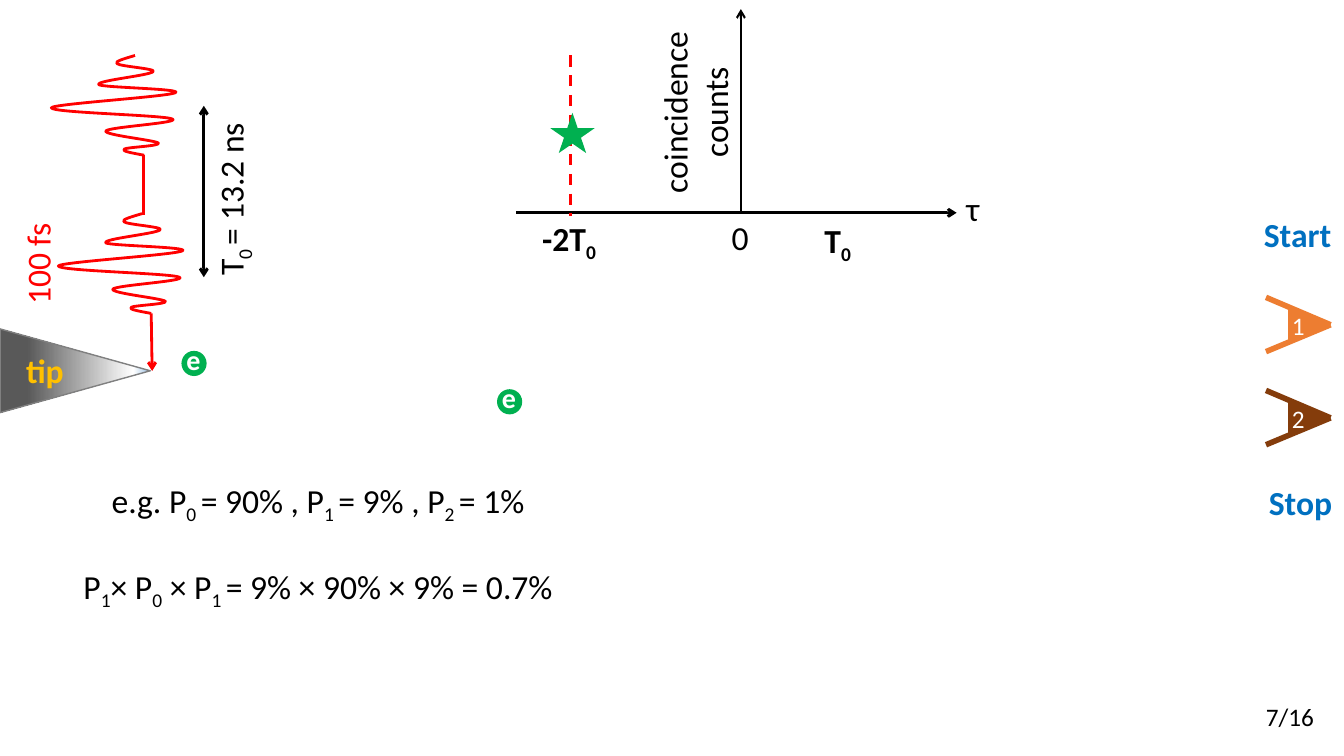
from lxml import etree
from pptx import Presentation
from pptx import util as u
from pptx.dml.color import RGBColor
from pptx.enum import dml, shapes, text
from pptx.oxml.ns import qn

Pt = u.Pt
BLACK, WHITE, RED, GREEN = "000000", "FFFFFF", "FF0000", "00B050"
ORANGE, BROWN, BLUE, GOLD = "ED7D31", "843C0B", "0070C0", "FFC000"

# Each row is one Bezier piece, relative to the start of the pulse.
PULSE_CURVES = [
    [(-7.2, 2.2), (-15.1, 4.3), (-13, 5.8)],
    [(-10.8, 7.9), (15.1, 9.4), (13, 11.5)],
    [(10.8, 14.4), (-28.8, 18), (-25.9, 20.9)],
    [(-23, 23), (34.6, 23.8), (28.8, 26.6)],
    [(23.8, 29.5), (-59, 34.6), (-59.8, 37.4)],
    [(-59.8, 41), (20.2, 42.5), (26.6, 45.4)],
    [(33.1, 48.2), (-19.4, 51.1), (-20.9, 54)],
    [(-22.3, 56.9), (14.4, 60.5), (16.6, 62.6)],
    [(18.7, 64.8), (-6.5, 65.5), (-7.9, 67)],
    [(-10.1, 68.4), (-1.4, 69.8), (6.5, 71.3)],
]


def color(hex_text):
    return RGBColor.from_string(hex_text)


def add_label(slide, box, lines, tint=BLACK, size=24, bold=False, rotation=0,
              centered=False, wrap=False, gap=0):
    """Add text; in each line, every second part between underscores is a subscript."""
    shape = slide.shapes.add_textbox(*map(Pt, box))
    shape.rotation = rotation
    frame = shape.text_frame
    frame.word_wrap = wrap
    frame.auto_size = text.MSO_AUTO_SIZE.SHAPE_TO_FIT_TEXT
    for index, line in enumerate(lines):
        paragraph = frame.add_paragraph() if index else frame.paragraphs[0]
        if centered:
            paragraph.alignment = text.PP_ALIGN.CENTER
        if index and gap:
            paragraph.space_before = Pt(gap)
        for part, content in enumerate(line.split("_")):
            run = paragraph.add_run()
            run.text = content
            look = {"name": "Calibri", "size": Pt(size), "bold": bold}
            for name, value in look.items():
                setattr(run.font, name, value)
            run.font.color.rgb = color(tint)
            if part % 2:
                run.font._element.set("baseline", "-25000")


def add_line(slide, start, end, tint=BLACK, width=2, arrows=(), dashed=False):
    """Draw a line; arrows holds headEnd (at start) and tailEnd (at end)."""
    line = slide.shapes.add_connector(
        shapes.MSO_CONNECTOR.STRAIGHT, *map(Pt, (*start, *end)))
    line.line.color.rgb = color(tint)
    line.line.width = Pt(width)
    if dashed:
        line.line.dash_style = dml.MSO_LINE.DASH
    outline = line.line._get_or_add_ln()
    for end_name in arrows:
        etree.SubElement(outline, qn("a:" + end_name), type="arrow")
    etree.SubElement(line._element.spPr, qn("a:effectLst"))


def add_solid(slide, kind, box, fill, rotation=0):
    shape = slide.shapes.add_shape(kind, *map(Pt, box))
    shape.shadow.inherit = False
    shape.rotation = rotation
    shape.fill.solid()
    shape.fill.fore_color.rgb = color(fill)
    shape.line.fill.background()
    return shape


def add_tip(slide):
    tip = add_solid(slide, shapes.MSO_SHAPE.ISOSCELES_TRIANGLE,
                    (23.8, 211.2, 59.8, 107.3), WHITE, 90)
    tip.line.color.rgb = color("808080")
    tip.line.width = Pt(1)
    tip.fill.gradient()
    tip.fill.gradient_angle = 270
    stops = tip._element.spPr.find(".//" + qn("a:gsLst"))
    stops.clear()
    for percent, tint in ((0, "99BEE1"), (11, WHITE), (82, "595959")):
        stop = etree.SubElement(stops, qn("a:gs"), pos=str(percent * 1000))
        etree.SubElement(stop, qn("a:srgbClr"), val=tint)
    add_label(slide, (11.5, 246.7, 41.8, 36), ["tip"], GOLD, bold=True)


def add_pulse(slide, left, top):
    """Draw a wave packet, bending each straight piece into its Bezier curve."""
    builder = slide.shapes.build_freeform(Pt(left), Pt(top))
    builder.add_line_segments(
        [(Pt(left + x), Pt(top + y)) for *_, (x, y) in PULSE_CURVES], close=False)
    pulse = builder.convert_to_shape()
    pieces = pulse._element.spPr.findall(".//" + qn("a:lnTo"))
    for piece, curve in zip(pieces, PULSE_CURVES):
        piece.clear()
        piece.tag = qn("a:cubicBezTo")
        for x, y in curve:
            etree.SubElement(piece, qn("a:pt"), x=str(Pt(left + x) - pulse.left),
                             y=str(Pt(top + y) - pulse.top))
    pulse.shadow.inherit = False
    pulse.fill.background()
    pulse.line.color.rgb = color(RED)
    pulse.line.width = Pt(2)


def add_electron(slide, left, top):
    add_solid(slide, shapes.MSO_SHAPE.OVAL, (left, top, 18, 18), GREEN)
    add_label(slide, (left - 3.6, top - 9.8, 24.5, 31.7), ["e"], WHITE, 20, True)


def add_detector(slide, top, number, tint):
    for y in (top, top + 38.8):
        add_line(slide, (904.3, y), (950.4, top + 19.6), tint, 4)
    add_solid(slide, shapes.MSO_SHAPE.ISOSCELES_TRIANGLE,
              (922.3, top + 5.8, 24.5, 28.8), tint, 90)
    add_label(slide, (915.8, top + 5.8, 23.8, 28.8), [number], WHITE, 18)


def add_laser(slide):
    add_pulse(slide, 101.5, 152.6)
    add_line(slide, (108, 223.9), (108.7, 265), RED, arrows=["tailEnd"])
    add_label(slide, (-10.1, 170, 73.4, 36), ["100 fs"], RED, rotation=270)
    add_pulse(slide, 96.5, 39.6)
    add_line(slide, (102.6, 110.9), (102.6, 153.4), RED)
    add_line(slide, (145.6, 198), (145.6, 75.6), arrows=["headEnd", "tailEnd"])
    add_label(slide, (100.8, 122.4, 127.4, 36), ["T_0 _= 13.2 ns"], rotation=270)


def add_coincidence_plot(slide):
    add_line(slide, (368.6, 152), (683.3, 152), arrows=["tailEnd"])
    add_line(slide, (529.2, 6.5), (529.2, 152.6), width=1.5, arrows=["headEnd"])
    add_label(slide, (422.6, 47.5, 147.6, 65.5), ["coincidence", "counts"],
              rotation=270, centered=True, wrap=True)
    add_label(slide, (683.3, 131, 23.8, 36), ["τ"])
    add_label(slide, (515.5, 151.7, 26.6, 36), ["0"])
    add_line(slide, (407.5, 39.6), (407.5, 154), RED, dashed=True)
    add_solid(slide, shapes.MSO_SHAPE.STAR_5_POINT, (393.1, 80.6, 31.7, 28.8), GREEN)
    add_label(slide, (380.2, 152, 54.7, 36), ["-2T_0"], bold=True)


def main():
    presentation = Presentation()
    presentation.slide_width, presentation.slide_height = Pt(960), Pt(540)
    slide = presentation.slides.add_slide(presentation.slide_layouts[6])

    add_tip(slide)
    add_electron(slide, 355, 278)
    add_laser(slide)
    add_electron(slide, 129.6, 250.6)
    add_coincidence_plot(slide)
    add_label(slide, (895.7, 149, 63.4, 36), ["Start"], BLUE, bold=True)
    add_label(slide, (899.3, 340.6, 60.5, 36), ["Stop"], BLUE, bold=True)
    add_label(slide, (43.9, 339.1, 366.5, 94.3),
              ["e.g. P_0 _= 90% , P_1 _= 9% , P_2 _= 1%",
               " P_1_× P_0_ × P_1 _= 9% × 90% × 9% = 0.7% "],
              centered=True, gap=28.8)
    add_label(slide, (581.8, 153.4, 34.6, 36), ["T_0"], bold=True)
    add_detector(slide, 212.4, "1", ORANGE)
    add_detector(slide, 278.9, "2", BROWN)
    add_label(slide, (897.1, 497.5, 49, 28.8), ["7/16"], size=18)

    presentation.save("out.pptx")


if __name__ == "__main__":
    main()
